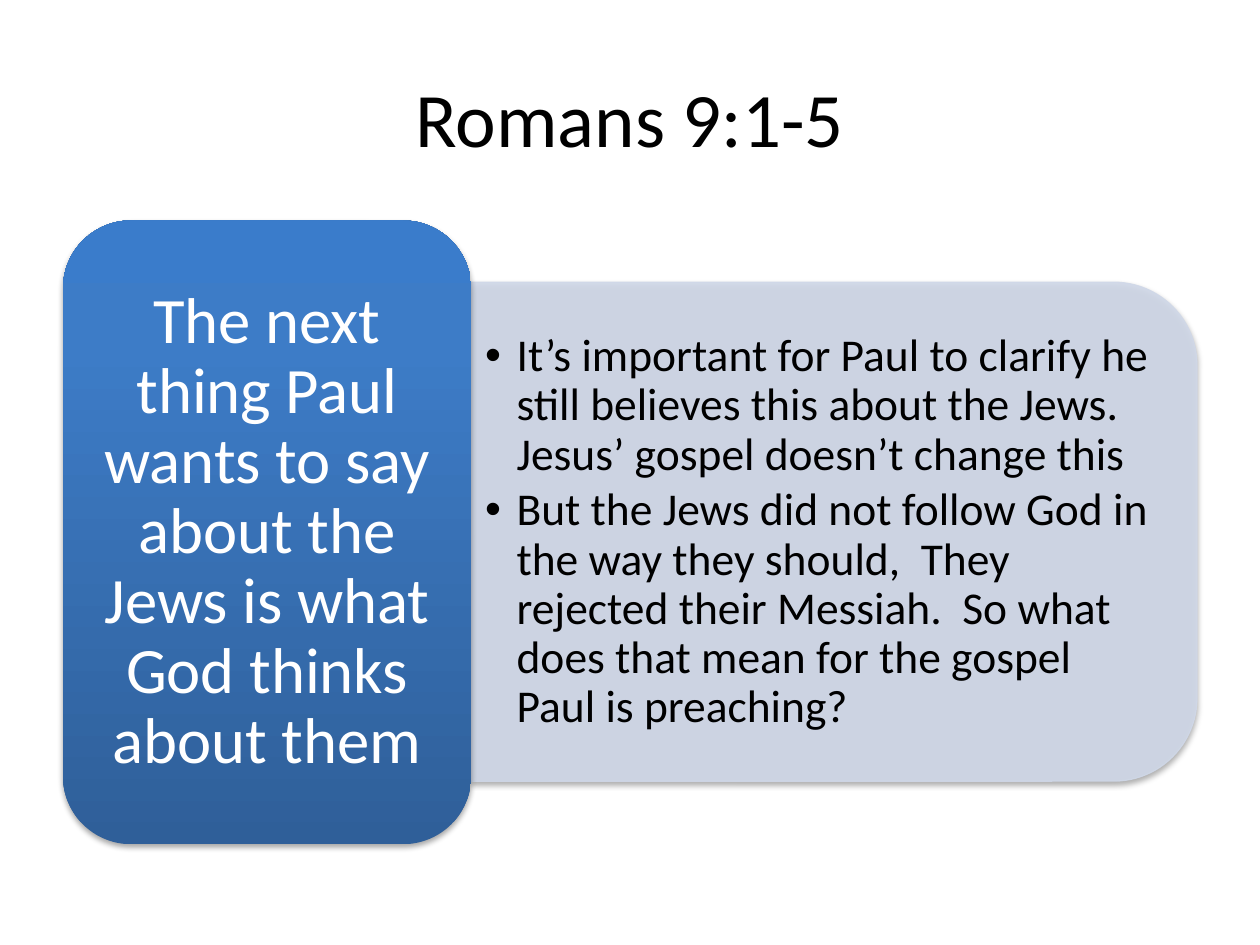
from pptx import Presentation
from pptx import util as u
from pptx.dml.color import RGBColor
from pptx.enum import shapes, text
from pptx.oxml import parse_xml
from pptx.oxml.ns import nsdecls, qn


class VerseSlide:
    """Style and element builders for a verse slide."""

    colors = {"ink": "000000", "light": "FFFFFF", "panel": "D0D8E8",
              "deep": "2F5F99", "mid": "3D7CC7", "bright": "3A7CCB"}
    font = "Calibri"

    def __init__(self, deck):
        self.slide = deck.slides.add_slide(deck.slide_layouts[1])

    def color(self, name):
        return RGBColor.from_string(self.colors[name])

    def place(self, shape, box):
        shape.left, shape.top, shape.width, shape.height = map(u.Inches, box)

    def frame(self, shape, margins):
        frame = shape.text_frame
        frame.word_wrap = True
        frame.auto_size = text.MSO_AUTO_SIZE.NONE
        frame.vertical_anchor = text.MSO_ANCHOR.MIDDLE
        frame.margin_left = frame.margin_right = u.Inches(margins[0])
        frame.margin_top = frame.margin_bottom = u.Inches(margins[1])
        return frame

    def format(self, paragraph, size, color, align, spacing=None):
        paragraph.alignment = align
        paragraph.line_spacing = spacing
        paragraph.font.name = self.font
        paragraph.font.size = u.Pt(size)
        paragraph.font.color.rgb = self.color(color)

    def title(self, wording, box):
        heading = self.slide.shapes.title
        self.place(heading, box)
        heading.text_frame.text = wording
        self.format(heading.text_frame.paragraphs[0], 44, "ink", text.PP_ALIGN.CENTER)

    def block(self, preset, box):
        block = self.slide.shapes.add_shape(preset, *map(u.Inches, box))
        block.shadow.inherit = False
        block.element.spPr.find(qn("a:effectLst")).append(parse_xml(
            f'<a:outerShdw {nsdecls("a")} blurRad="40000" dist="23000" dir="5400000" '
            'rotWithShape="0"><a:srgbClr val="000000"><a:alpha val="35000"/>'
            '</a:srgbClr></a:outerShdw>'))
        return block

    def panel(self, box):
        panel = self.block(shapes.MSO_SHAPE.ROUND_2_SAME_RECTANGLE, box)
        panel.rotation = 90
        panel.fill.solid()
        panel.fill.fore_color.rgb = self.color("panel")
        panel.line.color.rgb = self.color("panel")
        panel.line.width = u.Pt(0.75)
        for tint in panel.element.spPr.findall(f'.//{qn("a:solidFill")}/{qn("a:srgbClr")}'):
            tint.append(parse_xml(f'<a:alpha {nsdecls("a")} val="90000"/>'))
        return panel

    def points(self, wordings, box, panel):
        body = self.slide.placeholders[1]
        self.place(body, box)
        panel.element.addnext(body.element)
        frame = self.frame(body, (0.11, 0.05))
        for index, wording in enumerate(wordings):
            point = frame.add_paragraph() if index else frame.paragraphs[0]
            point.text = wording
            point.level = 1
            self.format(point, 26, "ink", text.PP_ALIGN.LEFT, 0.9)
            point.space_before = u.Pt(0)
            point.space_after = u.Pt(3.9)
            properties = point._p.get_or_add_pPr()
            properties.set("marL", str(u.Inches(0.25)))
            properties.set("indent", str(-u.Inches(0.25)))
            properties.insert_element_before(
                parse_xml(f'<a:buChar {nsdecls("a")} char="•"/>'), "a:tabLst", "a:defRPr")

    def lead(self, wording, box):
        lead = self.block(shapes.MSO_SHAPE.ROUNDED_RECTANGLE, box)
        lead.line.fill.background()
        lead.fill.background()
        stops = "".join(
            f'<a:gs pos="{percent * 1000}"><a:srgbClr val="{self.colors[name]}"/></a:gs>'
            for percent, name in ((0, "deep"), (80, "mid"), (100, "bright")))
        properties = lead.element.spPr
        properties.replace(properties.find(qn("a:noFill")), parse_xml(
            f'<a:gradFill {nsdecls("a")} rotWithShape="1"><a:gsLst>{stops}</a:gsLst>'
            '<a:lin ang="16200000" scaled="0"/></a:gradFill>'))
        frame = self.frame(lead, (0.15, 0.08))
        frame.text = wording
        self.format(frame.paragraphs[0], 37, "light", text.PP_ALIGN.CENTER, 0.9)


def main():
    deck = Presentation()
    deck.slide_width, deck.slide_height = u.Inches(10), u.Inches(7.5)
    verse = VerseSlide(deck)
    verse.title("Romans 9:1-5", (0.5, 0.3, 9, 1.25))
    panel = verse.panel((4.64, 1.34, 3.96, 5.76))
    verse.points((
        "It’s important for Paul to clarify he still believes this about the Jews.  "
        "Jesus’ gospel doesn’t change this",
        "But the Jews did not follow God in the way they should,  They rejected their "
        "Messiah.  So what does that mean for the gospel Paul is preaching?",
    ), (3.74, 2.44, 5.57, 3.57), panel)
    verse.lead("The next thing Paul wants to say about the Jews is what God thinks about them",
               (0.5, 1.75, 3.24, 4.95))
    deck.save("out.pptx")


if __name__ == "__main__":
    main()
